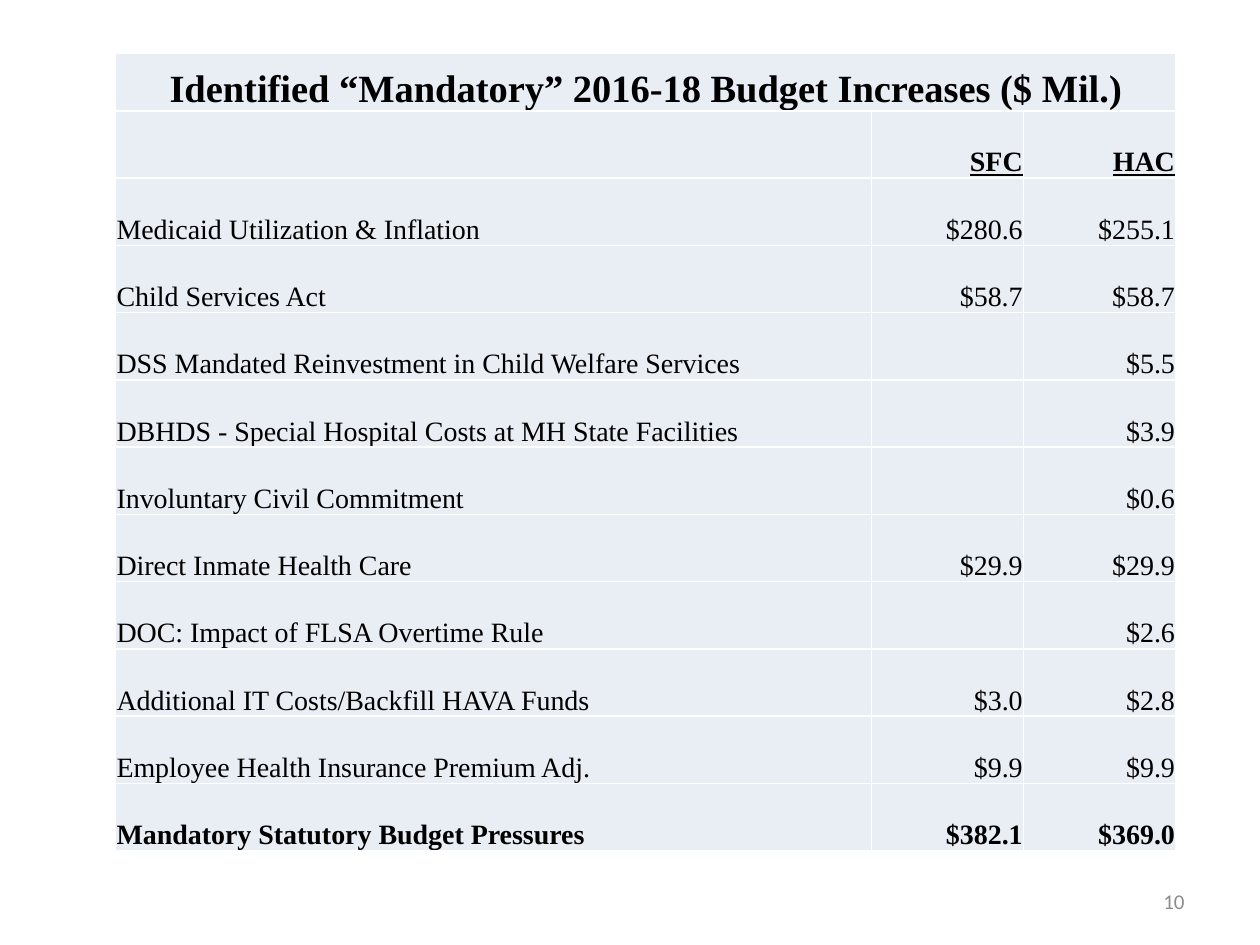
from dataclasses import dataclass

from lxml import etree
from pptx import Presentation
from pptx.dml.color import RGBColor
from pptx.enum.text import MSO_ANCHOR, PP_ALIGN
from pptx.oxml.ns import qn
from pptx.slide import Slide
from pptx.table import Table, _Cell
from pptx.util import Pt

LEFT, CENTER, RIGHT = PP_ALIGN.LEFT, PP_ALIGN.CENTER, PP_ALIGN.RIGHT
BOTTOM, MIDDLE = MSO_ANCHOR.BOTTOM, MSO_ANCHOR.MIDDLE

COLORS = {"cell": "E9EDF4", "border": "FFFFFF", "text": "000000", "number": "8C8C8C"}
TABLE_FONT = "Times New Roman"
NUMBER_FONT = "Calibri"
COLUMN_WIDTHS = (432, 87, 87)
TITLE_HEIGHT, ROW_HEIGHT = 33, 38.46


@dataclass(frozen=True)
class BudgetRow:
    label: str
    sfc: str
    hac: str
    size: float = 16
    bold: bool = False
    underline: bool = False
    title: bool = False


ROWS = (
    BudgetRow("Identified “Mandatory” 2016-18 Budget Increases ($ Mil.)", "", "",
              size=22, bold=True, title=True),
    BudgetRow("", "SFC", "HAC", bold=True, underline=True),
    BudgetRow("Medicaid Utilization & Inflation", "$280.6", "$255.1"),
    BudgetRow("Child Services Act", "$58.7", "$58.7"),
    BudgetRow("DSS Mandated Reinvestment in Child Welfare Services", "", "$5.5"),
    BudgetRow("DBHDS - Special Hospital Costs at MH State Facilities", "", "$3.9"),
    BudgetRow("Involuntary Civil Commitment", "", "$0.6"),
    BudgetRow("Direct Inmate Health Care", "$29.9", "$29.9"),
    BudgetRow("DOC: Impact of FLSA Overtime Rule", "", "$2.6"),
    BudgetRow("Additional IT Costs/Backfill HAVA Funds", "$3.0", "$2.8"),
    BudgetRow("Employee Health Insurance Premium Adj.", "$9.9", "$9.9"),
    BudgetRow("Mandatory Statutory Budget Pressures", "$382.1", "$369.0", bold=True),
)


def rgb(name: str) -> RGBColor:
    return RGBColor.from_string(COLORS[name])


def add_borders(cell: _Cell) -> None:
    tc_pr = cell._tc.get_or_add_tcPr()
    for side in ("lnL", "lnR", "lnT", "lnB"):
        ln = etree.SubElement(tc_pr, qn(f"a:{side}"), w=str(Pt(1)))
        fill = etree.SubElement(ln, qn("a:solidFill"))
        etree.SubElement(fill, qn("a:srgbClr"), val=COLORS["border"])


def format_cell(cell: _Cell, text: str, row: BudgetRow, align: PP_ALIGN) -> None:
    add_borders(cell)
    cell.fill.solid()
    cell.fill.fore_color.rgb = rgb("cell")
    cell.vertical_anchor = BOTTOM
    cell.margin_left = cell.margin_right = cell.margin_top = Pt(0.6)
    cell.margin_bottom = Pt(0)
    p = cell.text_frame.paragraphs[0]
    p.text = text
    p.alignment = align
    p.font.name = TABLE_FONT
    p.font.size = Pt(row.size)
    p.font.bold = row.bold
    p.font.underline = row.underline
    p.font.color.rgb = rgb("text")


def fill_row(table: Table, index: int, row: BudgetRow) -> None:
    table.rows[index].height = Pt(TITLE_HEIGHT if row.title else ROW_HEIGHT)
    for col, text in enumerate((row.label, row.sfc, row.hac)):
        align = CENTER if row.title else RIGHT if col else LEFT
        format_cell(table.cell(index, col), text, row, align)
    if row.title:
        table.cell(index, 0).merge(table.cell(index, len(COLUMN_WIDTHS) - 1))


def add_budget_table(s: Slide) -> None:
    height = TITLE_HEIGHT + ROW_HEIGHT * (len(ROWS) - 1)
    table = s.shapes.add_table(len(ROWS), len(COLUMN_WIDTHS), Pt(66), Pt(30.3),
                               Pt(sum(COLUMN_WIDTHS)), Pt(height)).table
    table.first_row = table.horz_banding = False
    for column, width in zip(table.columns, COLUMN_WIDTHS):
        column.width = Pt(width)
    for index, row in enumerate(ROWS):
        fill_row(table, index, row)


def add_page_number(s: Slide, number: str) -> None:
    tf = s.shapes.add_textbox(Pt(516), Pt(500.5), Pt(168), Pt(28.75)).text_frame
    tf.word_wrap = True
    tf.vertical_anchor = MIDDLE
    p = tf.paragraphs[0]
    p.text = number
    p.alignment = RIGHT
    p.font.name = NUMBER_FONT
    p.font.size = Pt(12)
    p.font.color.rgb = rgb("number")


def main() -> None:
    prs = Presentation()
    prs.slide_width, prs.slide_height = Pt(720), Pt(540)
    s = prs.slides.add_slide(prs.slide_layouts[6])
    add_page_number(s, "10")
    add_budget_table(s)
    prs.save("out.pptx")


if __name__ == "__main__":
    main()
